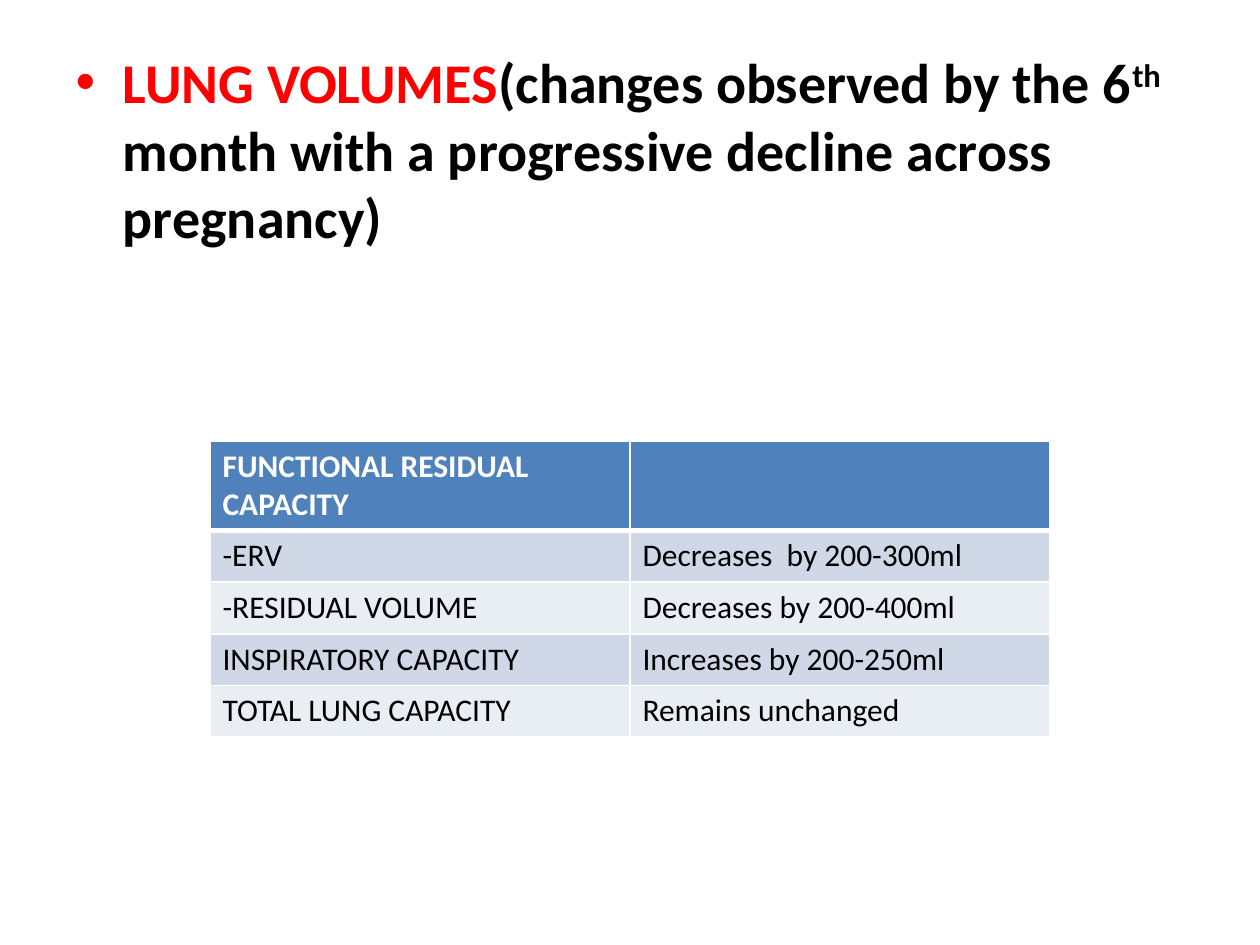
import dataclasses

import lxml.etree
import pptx
import pptx.dml.color
import pptx.oxml.ns
import pptx.util

COLORS = {
    "accent": "FF0000",
    "text": "000000",
    "white": "FFFFFF",
    "header": "4F81BD",
    "odd": "D0D8E8",
    "even": "E9EDF4",
}
FONT = "Calibri"
WIDTH, HEIGHT = pptx.util.Inches(10), pptx.util.Inches(7.5)
HEADER_HEIGHT, ROW_HEIGHT = pptx.util.Inches(0.69), pptx.util.Inches(0.41)


@dataclasses.dataclass
class Span:
    text: str
    color: str = "text"
    baseline: int = 0


HEADING = [
    Span("LUNG VOLUMES", "accent"),
    Span("(changes observed by the 6"),
    Span("th", baseline=30000),
    Span(" month with a progressive decline across pregnancy)"),
]
ROWS = [
    ("FUNCTIONAL RESIDUAL CAPACITY", ""),
    ("-ERV", "Decreases  by 200-300ml"),
    ("-RESIDUAL VOLUME", "Decreases by 200-400ml"),
    ("INSPIRATORY CAPACITY", "Increases by 200-250ml"),
    ("TOTAL LUNG CAPACITY", "Remains unchanged"),
]


def rgb(name: str) -> pptx.dml.color.RGBColor:
    return pptx.dml.color.RGBColor.from_string(COLORS[name])


def format_font(font, size: int, color: str, bold: bool) -> None:
    font.name, font.size, font.bold = FONT, pptx.util.Pt(size), bold
    font.color.rgb = rgb(color)


def add_border(cell, side: str, points: int) -> None:
    qn = pptx.oxml.ns.qn
    properties = cell._tc.get_or_add_tcPr()
    line = lxml.etree.SubElement(properties, qn(f"a:ln{side}"), w=str(pptx.util.Pt(points)))
    fill = lxml.etree.SubElement(line, qn("a:solidFill"))
    lxml.etree.SubElement(fill, qn("a:srgbClr"), val=COLORS["white"])


def fill_heading(box) -> None:
    box.left, box.top = int(WIDTH * 0.05), pptx.util.Inches(0.33)
    box.width, box.height = int(WIDTH * 0.9), pptx.util.Inches(6.37)
    para = box.text_frame.paragraphs[0]
    for part in HEADING:
        span = para.add_run()
        span.text = part.text
        format_font(span.font, 32, part.color, True)
        if part.baseline:
            span.font._element.set("baseline", str(part.baseline))


def format_cell(cell, text: str, row: int) -> None:
    is_header = row == 0
    cell.text = text
    para = cell.text_frame.paragraphs[0]
    for font in [para.font, *(span.font for span in para.runs)]:
        format_font(font, 18, "white" if is_header else "text", is_header)
    # The rule under the header is heavier than the others
    widths = {"L": 1, "R": 1, "T": 3 if row == 1 else 1, "B": 3 if is_header else 1}
    for side, points in widths.items():
        add_border(cell, side, points)
    cell.fill.solid()
    cell.fill.fore_color.rgb = rgb("header" if is_header else "odd" if row % 2 else "even")


def add_volume_table(page) -> None:
    heights = [HEADER_HEIGHT] + [ROW_HEIGHT] * (len(ROWS) - 1)
    table = page.shapes.add_table(
        len(ROWS), 2, WIDTH // 6, pptx.util.Inches(3.5), WIDTH * 2 // 3, sum(heights)
    ).table
    for row, (texts, height) in enumerate(zip(ROWS, heights)):
        table.rows[row].height = height
        for column, text in enumerate(texts):
            format_cell(table.cell(row, column), text, row)


def main() -> None:
    deck = pptx.Presentation()
    deck.slide_width, deck.slide_height = WIDTH, HEIGHT
    page = deck.slides.add_slide(deck.slide_layouts[1])

    # Heading bullet only, so the unused title goes
    title = page.shapes.title.element
    title.getparent().remove(title)
    fill_heading(page.placeholders[1])

    # Table of lung volumes
    add_volume_table(page)
    deck.save("out.pptx")


if __name__ == "__main__":
    main()
